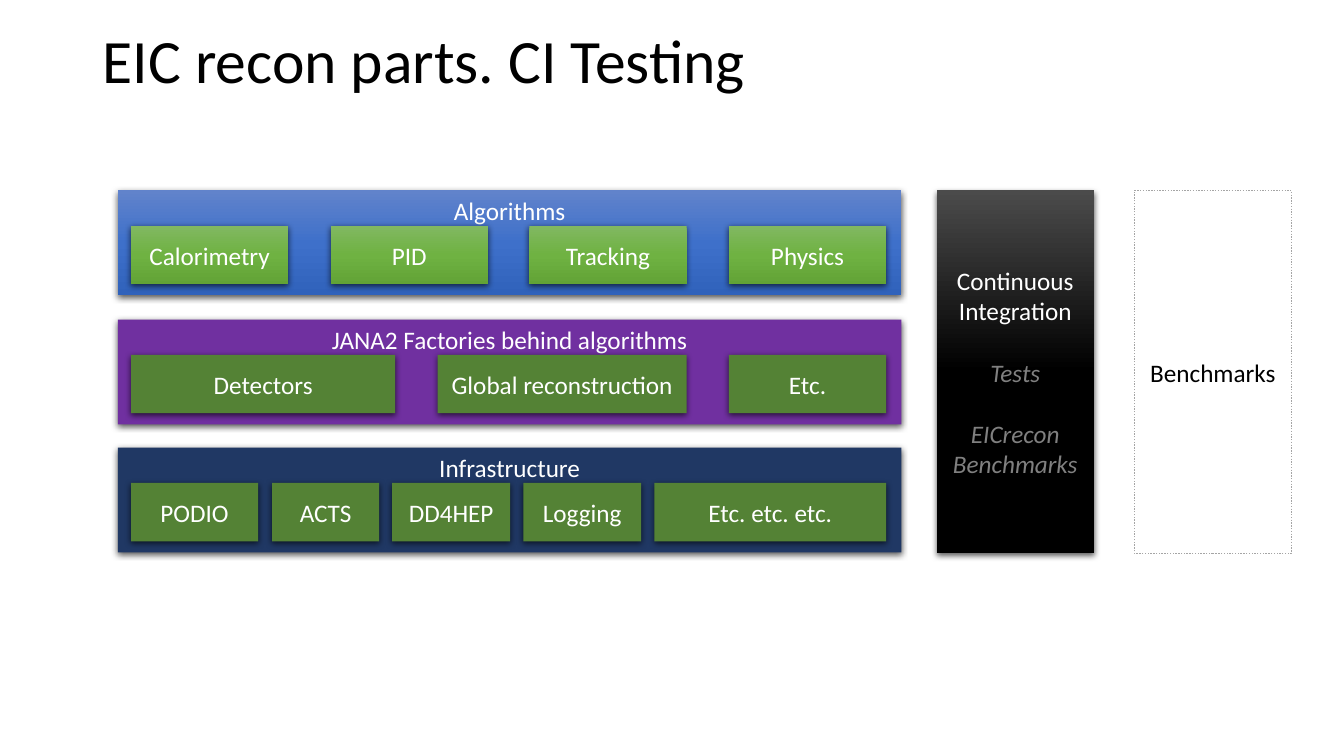
import copy

import lxml.etree
import pptx
import pptx.dml.color
import pptx.enum.dml
import pptx.enum.shapes
import pptx.enum.text
import pptx.oxml.ns
import pptx.util

Inches = pptx.util.Inches
Pt = pptx.util.Pt
qn = pptx.oxml.ns.qn

COLORS = {
    "white": "FFFFFF", "black": "000000", "gray": "808080", "silver": "A5A5A5",
    "purple": "7030A0", "navy": "203864", "moss": "548235",
    "blue": ("6183CB", "3E70CA", "3062BB"),
    "green": ("81B861", "6FB242", "62A336"),
    "dark": ("4B4B4B", "000000", "000000"),
}
LAYERS = [
    ("Algorithms", "blue", "green", 1.89,
     [("Calorimetry", 1.3, 1.56), ("PID", 3.28, 1.56),
      ("Tracking", 5.25, 1.56), ("Physics", 7.23, 1.56)]),
    ("JANA2 Factories behind algorithms", "purple", "moss", 3.17,
     [("Detectors", 1.3, 2.62), ("Global reconstruction", 4.34, 2.47),
      ("Etc.", 7.23, 1.56)]),
    ("Infrastructure", "navy", "moss", 4.44,
     [("PODIO", 1.3, 1.26), ("ACTS", 2.7, 1.06), ("DD4HEP", 3.89, 1.17),
      ("Logging", 5.19, 1.17), ("Etc. etc. etc.", 6.49, 2.3)]),
]


def rgb(name):
    """Return the named color."""
    return pptx.dml.color.RGBColor.from_string(COLORS[name])


def style(par, size, color, italic=False):
    """Format every run of a paragraph."""
    for run in par.runs:
        run.font.name = "Calibri"
        run.font.size = Pt(size)
        run.font.italic = italic
        run.font.color.rgb = rgb(color)


def paint(shape, color):
    """Fill a shape with a plain color or a vertical gradient."""
    fill = shape.fill
    if isinstance(COLORS[color], str):
        fill.solid()
        fill.fore_color.rgb = rgb(color)
        return
    fill.gradient()
    fill.gradient_angle = 270
    stops = shape._element.spPr.find(".//" + qn("a:gsLst"))
    stops.append(copy.deepcopy(stops[0]))
    for i, (stop, tone) in enumerate(zip(fill.gradient_stops, COLORS[color])):
        stop.position = i / 2
        stop.color.rgb = pptx.dml.color.RGBColor.from_string(tone)


def shade(shape):
    """Cast a soft shadow below a shape."""
    effects = shape._element.spPr.find(qn("a:effectLst"))
    outer = lxml.etree.SubElement(
        effects, qn("a:outerShdw"), blurRad=str(Pt(4.5)), dist=str(Pt(1.5)),
        dir="5400000", algn="ctr", rotWithShape="0")
    tone = lxml.etree.SubElement(outer, qn("a:srgbClr"), val=COLORS["black"])
    lxml.etree.SubElement(tone, qn("a:alpha"), val="63000")


def box(shapes, text, left, top, width, height, color, ink="white", anchor="MIDDLE"):
    """Add a borderless rectangle with centered text."""
    shape = shapes.add_shape(
        pptx.enum.shapes.MSO_SHAPE.RECTANGLE,
        Inches(left), Inches(top), Inches(width), Inches(height))
    paint(shape, color)
    shape.line.fill.background()
    shape.shadow.inherit = False
    frame = shape.text_frame
    frame.text = text
    frame.word_wrap = True
    frame.vertical_anchor = pptx.enum.text.MSO_ANCHOR[anchor]
    for par in frame.paragraphs:
        par.alignment = pptx.enum.text.PP_ALIGN.CENTER
        style(par, 18, ink)
    return shape


def layer(slide, name, color, tint, top, tiles):
    """Add a grouped band with its row of tiles."""
    group = slide.shapes.add_group_shape()
    shade(box(group.shapes, name, 1.17, top, 7.77, 1.04, color, anchor="TOP"))
    for text, left, width in tiles:
        shade(box(group.shapes, text, left, top + 0.35, width, 0.58, tint))


def head(slide, text):
    """Place and format the title."""
    title = slide.shapes.title
    title.left, title.top = Inches(0.92), Inches(-0.09)
    title.width, title.height = Inches(11.5), Inches(1.45)
    frame = title.text_frame
    frame.text = text
    frame.vertical_anchor = pptx.enum.text.MSO_ANCHOR.MIDDLE
    par = frame.paragraphs[0]
    par.alignment = pptx.enum.text.PP_ALIGN.LEFT
    par.line_spacing = 0.9
    style(par, 44, "black")


def tests(slide):
    """Add the integration column with its muted test list."""
    text = "Continuous Integration\nTests\nEICrecon\nBenchmarks"
    shape = box(slide.shapes, text, 9.29, 1.89, 1.56, 3.6, "dark")
    shade(shape)
    pars = shape.text_frame.paragraphs
    for par in pars[1:]:
        style(par, 18, "gray", italic=True)
    for par in pars[1:3]:
        par.space_before = Pt(22)


def bench(slide):
    """Add the dotted benchmark column."""
    shape = box(slide.shapes, "Benchmarks", 11.25, 1.89, 1.56, 3.6, "white", "black")
    shape.line.color.rgb = rgb("silver")
    shape.line.width = Pt(1)
    shape.line.dash_style = pptx.enum.dml.MSO_LINE.ROUND_DOT


def main():
    """Build and save the slide."""
    deck = pptx.Presentation()
    deck.slide_width, deck.slide_height = Inches(13.33), Inches(7.5)
    slide = deck.slides.add_slide(deck.slide_layouts[5])
    head(slide, "EIC recon parts. CI Testing")
    for row in LAYERS:
        layer(slide, *row)
    tests(slide)
    bench(slide)
    deck.save("out.pptx")


if __name__ == "__main__":
    main()
